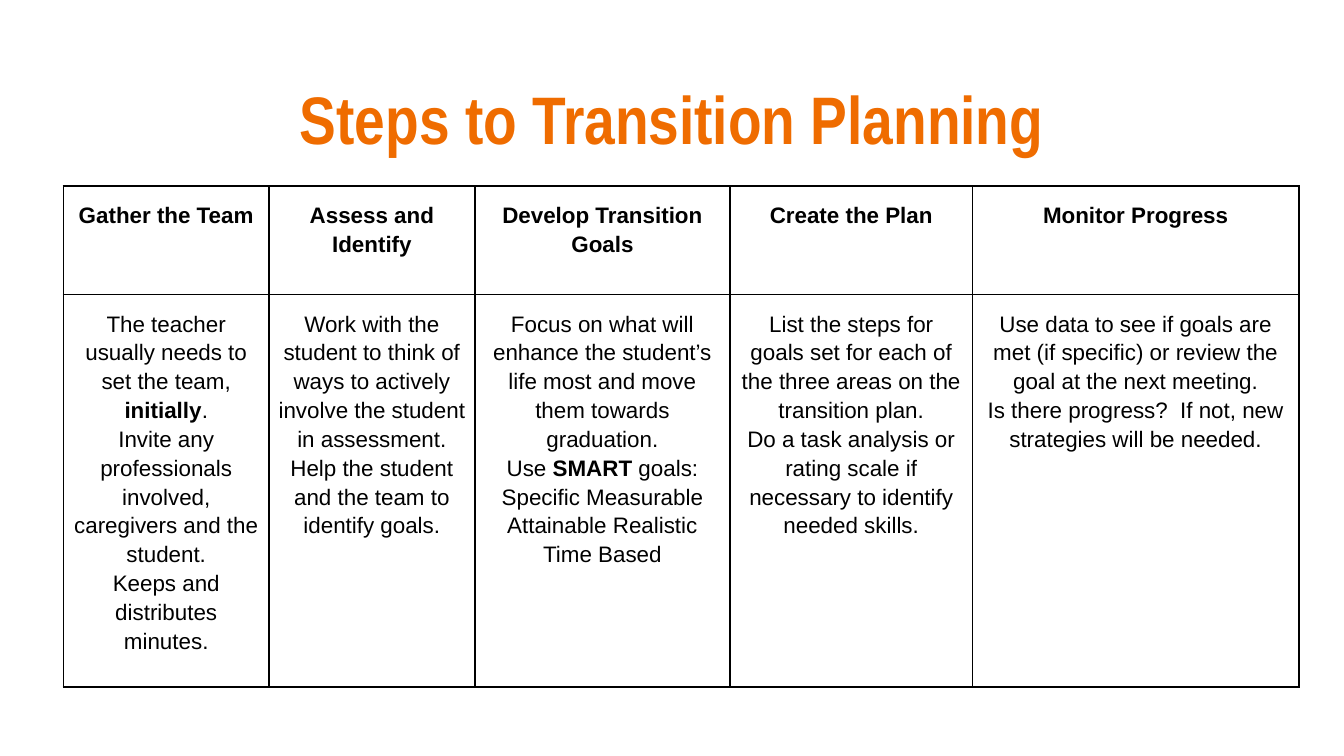
from lxml import etree
from pptx import Presentation
from pptx.dml.color import RGBColor
from pptx.enum.text import MSO_ANCHOR, MSO_AUTO_SIZE, PP_ALIGN
from pptx.oxml.ns import qn
from pptx.util import Pt

CENTER = PP_ALIGN.CENTER
MIDDLE, TOP = MSO_ANCHOR.MIDDLE, MSO_ANCHOR.TOP
NO_AUTOFIT = MSO_AUTO_SIZE.NONE
TITLE_ONLY = 5

# Content: heading and paragraphs of each step; ** switches bold on and off
TITLE = "Steps to Transition Planning"
STEPS = [
    ("Gather the Team", [
        "The teacher usually needs to set the team, **initially**.",
        "Invite any professionals involved, caregivers and the student.",
        "Keeps and distributes minutes."]),
    ("Assess and Identify", [
        "Work with the student to think of ways to actively involve the "
        "student in assessment.",
        "Help the student and the team to identify goals."]),
    ("Develop Transition Goals", [
        "Focus on what will enhance the student’s life most and move them "
        "towards graduation.",
        "Use **SMART** goals: Specific Measurable Attainable Realistic "
        "Time Based"]),
    ("Create the Plan", [
        "List the steps for goals set for each of the three areas on the "
        "transition plan.",
        "Do a task analysis or rating scale if necessary to identify needed "
        "skills."]),
    ("Monitor Progress", [
        "Use data to see if goals are met (if specific) or review the goal at "
        "the next meeting.",
        "Is there progress?  If not, new strategies will be needed."]),
]

# Theme and layout, in points
THEME = {
    "title": {"font": "Arial Narrow", "size": 36, "color": "EF6C00"},
    "table": {"font": "Arial", "size": 12, "color": "000000"},
    "border": {"color": "000000", "width": 1},
}
SLIDE_SIZE = (720, 405)
TITLE_BOX = (24.5, 35.3, 671, 55.4)
TABLE_AT = (34, 99.6)
COL_WIDTHS = (110.2, 110.2, 136.8, 129.8, 175)
ROW_HEIGHTS = (58.2, 210.4)
INSET_X, INSET_Y = 5, 7.2
LINE_SPACING = 1.15


def style_run(r, style, bold):
    r.font.name = style["font"]
    r.font.size = Pt(style["size"])
    r.font.color.rgb = RGBColor.from_string(style["color"])
    r.font.bold = bold


def add_borders(cell):
    tc_pr = cell._tc.get_or_add_tcPr()
    for side in ("lnL", "lnR", "lnT", "lnB"):
        ln = etree.SubElement(tc_pr, qn(f"a:{side}"),
                              w=str(Pt(THEME["border"]["width"])))
        fill = etree.SubElement(ln, qn("a:solidFill"))
        etree.SubElement(fill, qn("a:srgbClr"), val=THEME["border"]["color"])


def fill_cell(cell, paragraphs):
    cell.margin_left = cell.margin_right = Pt(INSET_X)
    cell.margin_top = cell.margin_bottom = Pt(INSET_Y)
    cell.vertical_anchor = TOP
    add_borders(cell)
    cell.fill.background()
    tf = cell.text_frame
    for i, text in enumerate(paragraphs):
        p = tf.add_paragraph() if i else tf.paragraphs[0]
        p.alignment = CENTER
        p.line_spacing = LINE_SPACING
        for j, part in enumerate(text.split("**")):
            if part:
                r = p.add_run()
                r.text = part
                style_run(r, THEME["table"], j % 2 == 1)


prs = Presentation()
prs.slide_width, prs.slide_height = map(Pt, SLIDE_SIZE)
s = prs.slides.add_slide(prs.slide_layouts[TITLE_ONLY])

# Title
sp = s.shapes.title
sp.left, sp.top, sp.width, sp.height = map(Pt, TITLE_BOX)
tf = sp.text_frame
tf.text = TITLE
tf.auto_size = NO_AUTOFIT
tf.vertical_anchor = MIDDLE
tf.margin_left = tf.margin_right = tf.margin_top = tf.margin_bottom = Pt(7.2)
p = tf.paragraphs[0]
p.alignment = CENTER
style_run(p.runs[0], THEME["title"], True)

# Table of steps: headings above, details below
table = s.shapes.add_table(
    len(ROW_HEIGHTS), len(STEPS), *map(Pt, TABLE_AT),
    Pt(sum(COL_WIDTHS)), Pt(sum(ROW_HEIGHTS))).table
table.first_row = table.horz_banding = False
for row, height in zip(table.rows, ROW_HEIGHTS):
    row.height = Pt(height)
for c, (width, (heading, details)) in enumerate(zip(COL_WIDTHS, STEPS)):
    table.columns[c].width = Pt(width)
    fill_cell(table.cell(0, c), [f"**{heading}**"])
    fill_cell(table.cell(1, c), details)

prs.save("out.pptx")
